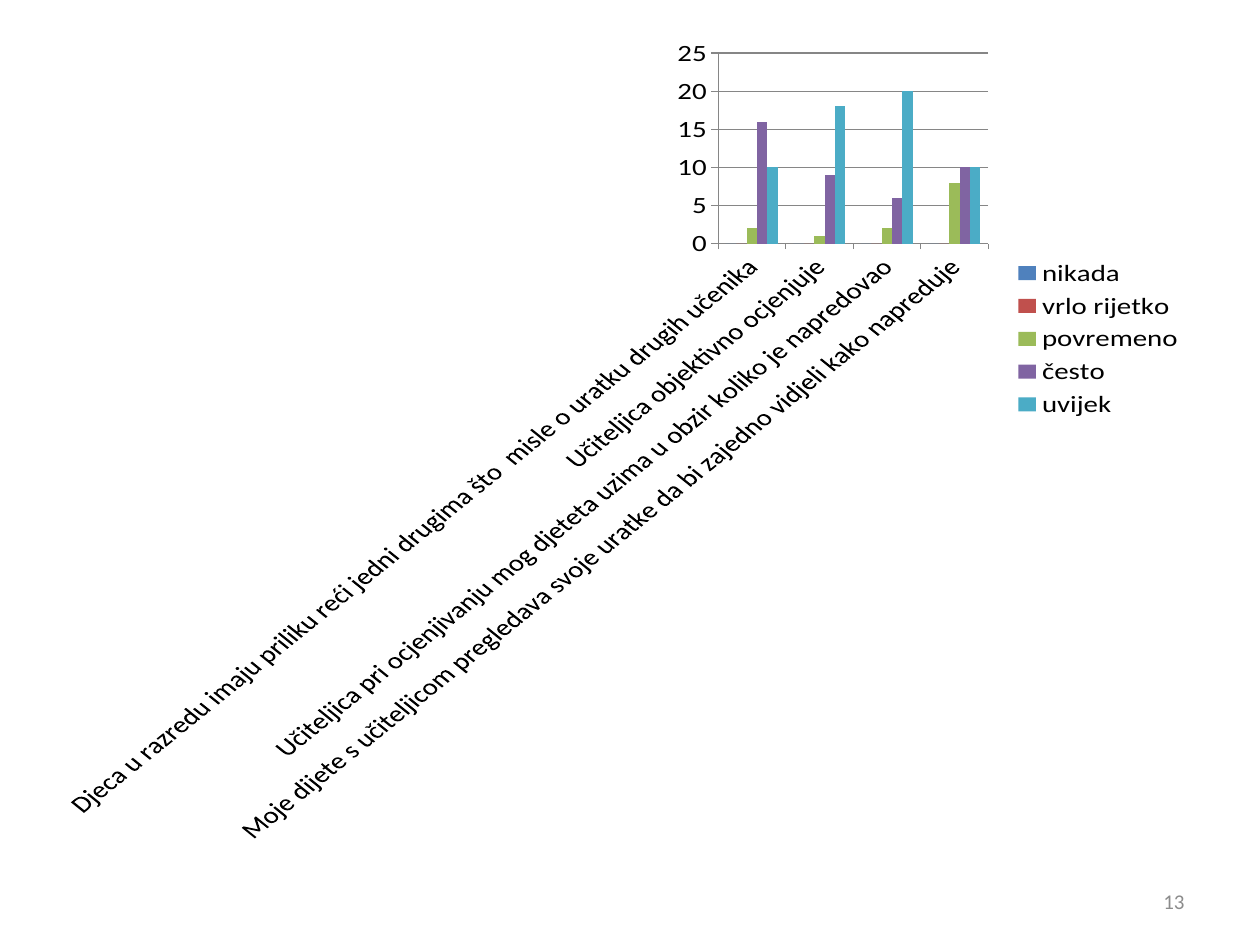
from dataclasses import dataclass

import pptx
import pptx.chart.data
import pptx.dml.color
import pptx.enum.chart
import pptx.enum.text
import pptx.util

PX = pptx.util.Inches(1) // 126


@dataclass(frozen=True)
class Theme:
    font: str = "Calibri"
    ink: str = "000000"
    muted: str = "8C8C8C"
    axis: str = "868686"
    chart_size: int = 18
    number_size: int = 12
    series: tuple = ("4F81BD", "C0504D", "9BBB59", "8064A2", "4BACC6")


class SlideBuilder:
    def __init__(self, page, theme):
        self.page = page
        self.theme = theme

    def style_font(self, font, size, color):
        font.name = self.theme.font
        font.size = pptx.util.Pt(size)
        font.color.rgb = pptx.dml.color.RGBColor.from_string(color)

    def style_line(self, line):
        line.color.rgb = pptx.dml.color.RGBColor.from_string(self.theme.axis)
        line.width = pptx.util.Pt(0.75)

    def column_chart(self, left, top, width, height, categories, answers):
        data = pptx.chart.data.CategoryChartData()
        data.categories = categories
        for name, values in answers.items():
            data.add_series(name, values)
        frame = self.page.shapes.add_chart(
            pptx.enum.chart.XL_CHART_TYPE.COLUMN_CLUSTERED,
            left * PX, top * PX, width * PX, height * PX, data)
        chart = frame.chart
        self.style_font(chart.font, self.theme.chart_size, self.theme.ink)
        chart.has_title = False
        chart.has_legend = True
        chart.legend.position = pptx.enum.chart.XL_LEGEND_POSITION.RIGHT
        chart.legend.include_in_layout = False

        plot = chart.plots[0]
        plot.gap_width = 150
        plot.overlap = 0
        plot.vary_by_categories = False
        for series, color in zip(plot.series, self.theme.series):
            series.format.fill.solid()
            series.format.fill.fore_color.rgb = pptx.dml.color.RGBColor.from_string(color)
            series.invert_if_negative = False

        for axis in (chart.category_axis, chart.value_axis):
            axis.major_tick_mark = pptx.enum.chart.XL_TICK_MARK.OUTSIDE
            axis.minor_tick_mark = pptx.enum.chart.XL_TICK_MARK.NONE
            self.style_line(axis.format.line)
        chart.value_axis.has_major_gridlines = True
        self.style_line(chart.value_axis.major_gridlines.format.line)

    def page_number(self, left, top, width, height, number):
        box = self.page.shapes.add_textbox(left * PX, top * PX, width * PX, height * PX)
        box.text_frame.word_wrap = True
        box.text_frame.vertical_anchor = pptx.enum.text.MSO_ANCHOR.MIDDLE
        para = box.text_frame.paragraphs[0]
        para.text = number
        para.alignment = pptx.enum.text.PP_ALIGN.RIGHT
        self.style_font(para.runs[0].font, self.theme.number_size, self.theme.muted)


def main():
    deck = pptx.Presentation()
    deck.slide_width = pptx.util.Inches(10)
    deck.slide_height = pptx.util.Inches(7.5)
    blank_layout = deck.slide_layouts[6]
    builder = SlideBuilder(deck.slides.add_slide(blank_layout), Theme())

    statements = [
        "Djeca u razredu imaju priliku reći jedni drugima što  misle o uratku drugih učenika",
        "Učiteljica objektivno ocjenjuje",
        "Učiteljica pri ocjenjivanju mog djeteta uzima u obzir koliko je napredovao",
        "Moje dijete s učiteljicom pregledava svoje uratke da bi zajedno vidjeli kako napreduje",
    ]
    answers = {
        "nikada": (0, 0, 0, 0),
        "vrlo rijetko": (0, 0, 0, 0),
        "povremeno": (2, 1, 2, 8),
        "često": (16, 9, 6, 10),
        "uvijek": (10, 18, 20, 10),
    }
    builder.column_chart(63, 39, 1134, 805, statements, answers)
    builder.page_number(903, 876, 294, 50, "13")
    deck.save("out.pptx")


if __name__ == "__main__":
    main()
